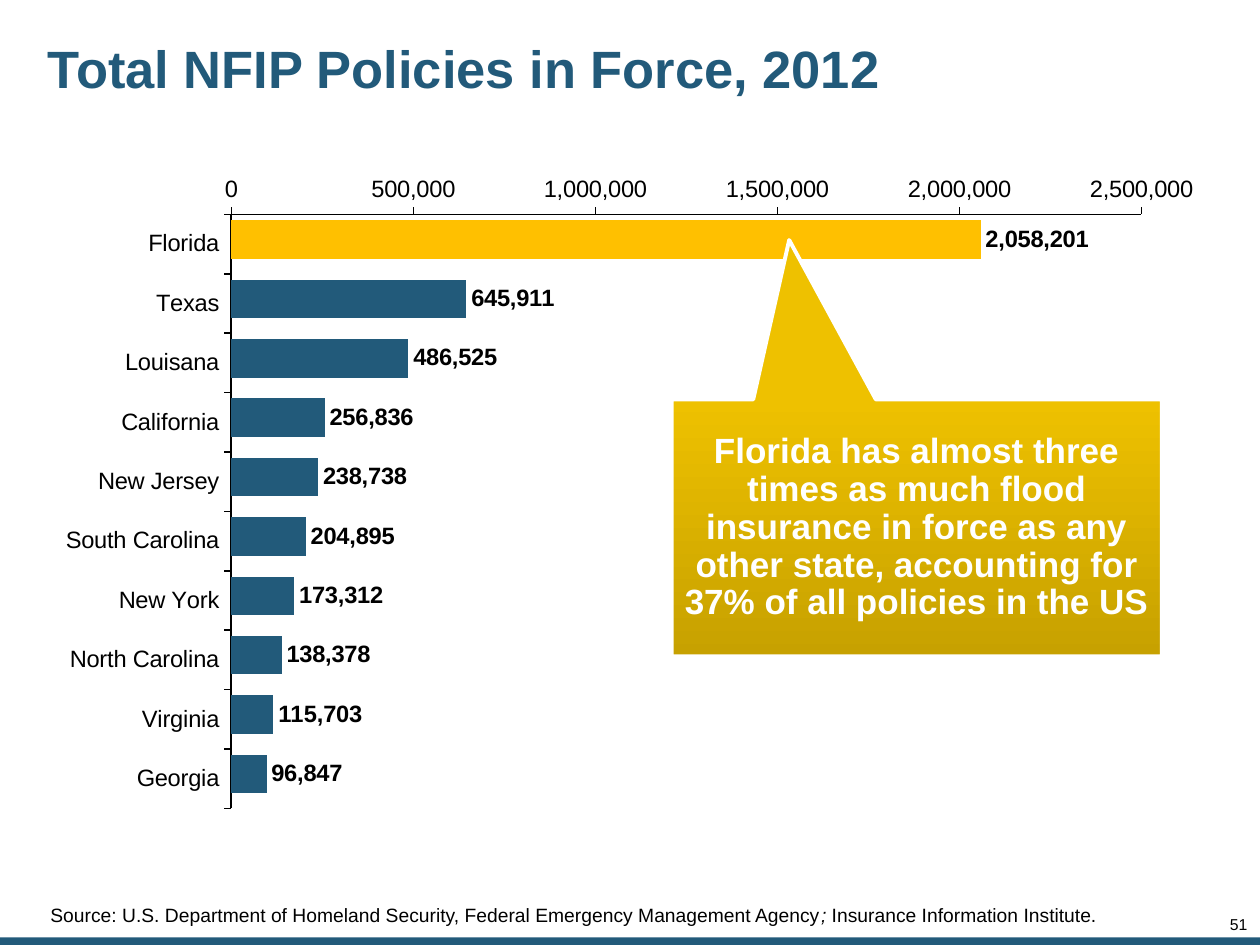
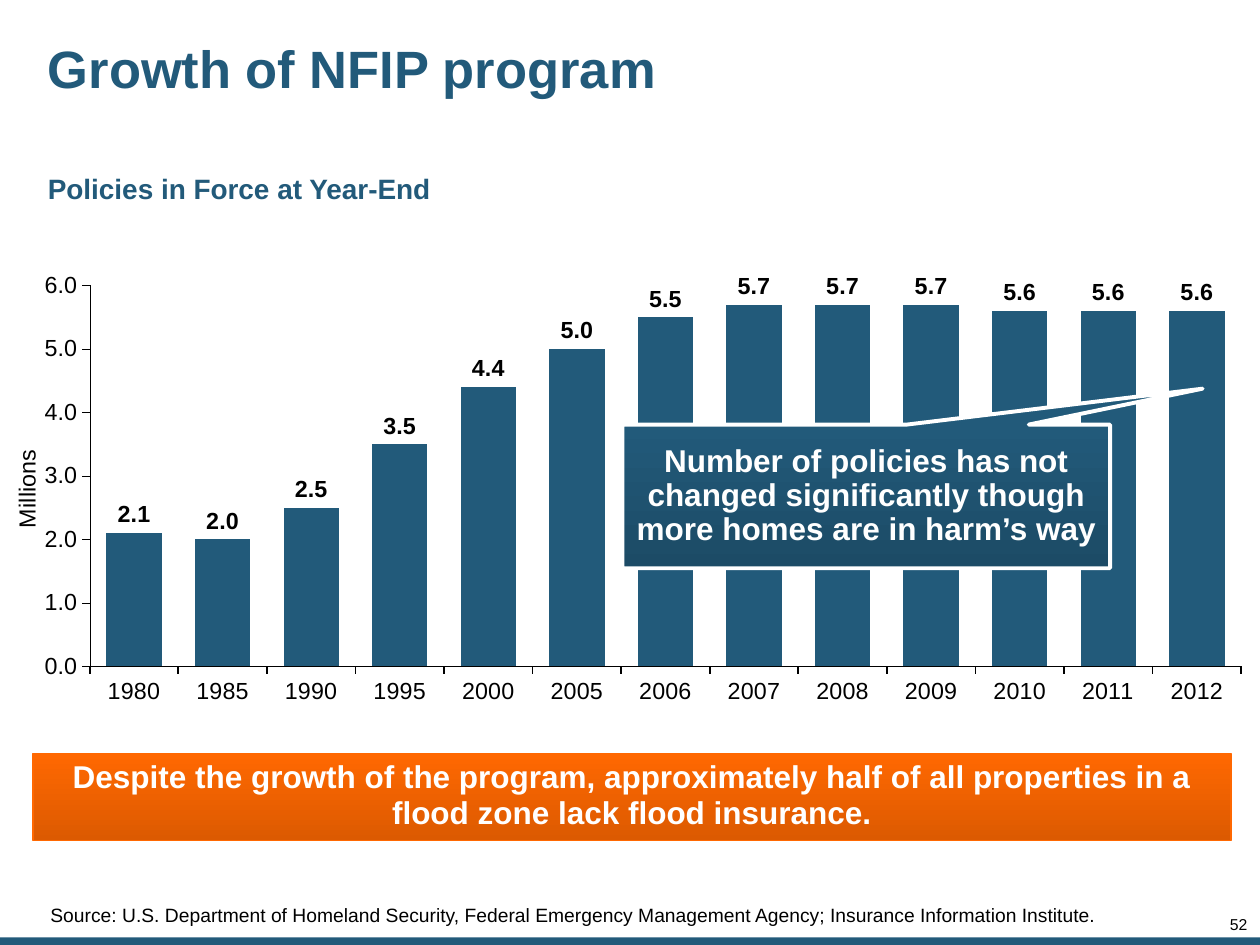
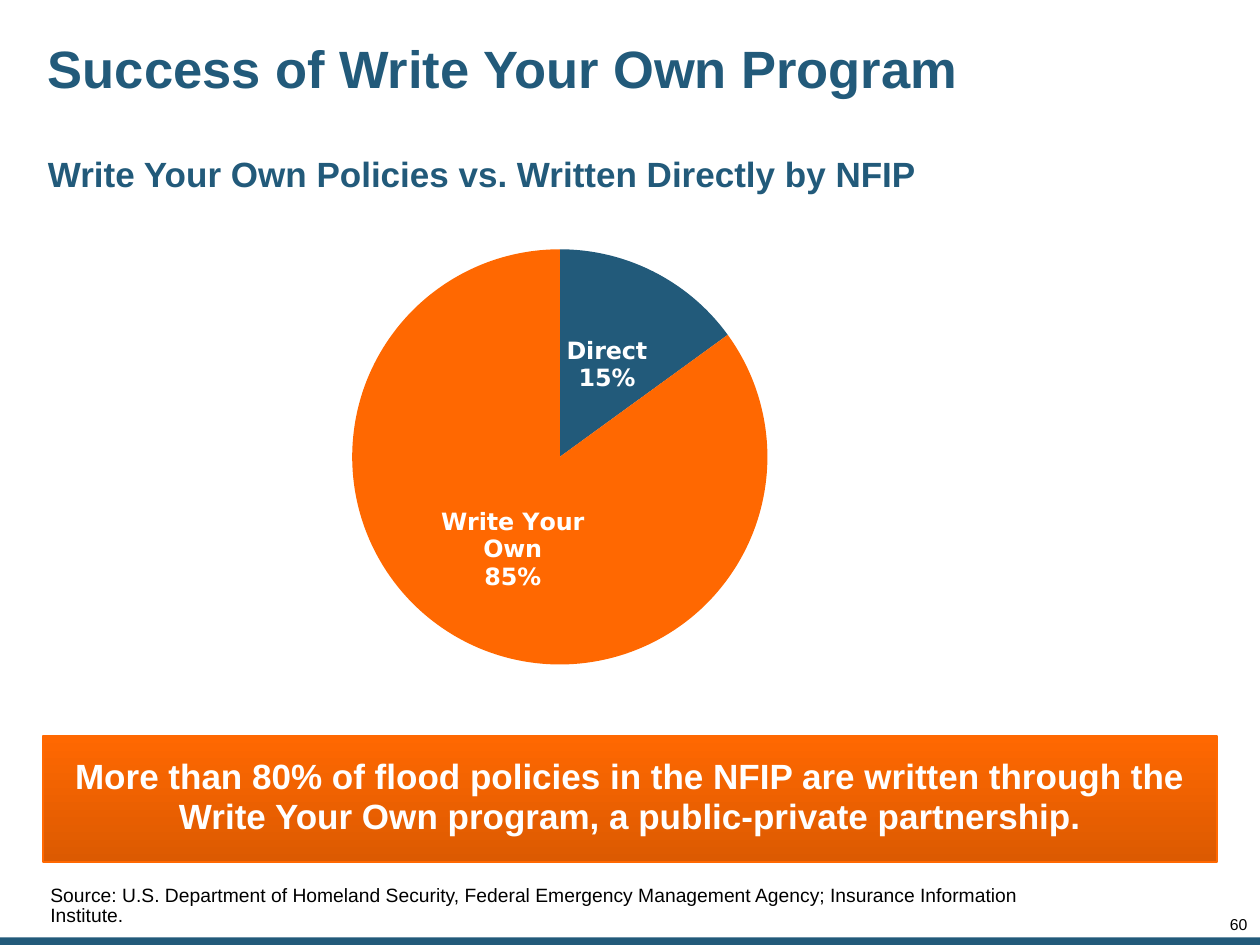
from dataclasses import dataclass

from lxml import etree
from pptx import Presentation
from pptx import util as u
from pptx.chart.data import CategoryChartData
from pptx.dml.color import RGBColor
from pptx.enum import chart as charts, shapes, text
from pptx.oxml.ns import qn

Inches, Pt = u.Inches, u.Pt
ALIGN, ANCHOR = text.PP_ALIGN, text.MSO_ANCHOR


@dataclass(frozen=True)
class Theme:
    font: str = "Arial"
    pie_font: str = "DejaVu Sans"
    ink: str = "000000"
    white: str = "FFFFFF"
    blue: str = "225A7A"
    deep_blue: str = "1C4B66"
    orange: str = "FF6801"
    deep_orange: str = "DC5A01"
    gold: str = "EEC100"
    deep_gold: str = "C7A100"
    highlight: str = "FFC000"
    title: float = 30
    large: float = 20
    medium: float = 18
    small: float = 16
    source: float = 11
    number: float = 9
    bar_label: float = 13.8
    column_label: float = 13.3
    pie_label: float = 13.6


THEME = Theme()
AGENCY = "Source: U.S. Department of Homeland Security, Federal Emergency Management Agency"
INSTITUTE = "Insurance Information Institute."


def color(code):
    return RGBColor.from_string(code)


def place(at):
    return [Inches(length) for length in at]


def set_font(font, size, code, bold=False, name=THEME.font):
    font.name, font.size, font.bold = name, Pt(size), bold
    font.color.rgb = color(code)


def write(box, spans, size, code=THEME.ink, bold=False, align=ALIGN.LEFT,
          anchor=ANCHOR.TOP, insets=(0, 0, 0, 0), spacing=0.9):
    frame = box.text_frame
    frame.word_wrap = True
    frame.auto_size = text.MSO_AUTO_SIZE.NONE
    frame.vertical_anchor = anchor
    frame.margin_left, frame.margin_top, frame.margin_right, frame.margin_bottom = place(insets)
    para = frame.paragraphs[0]
    para.alignment, para.line_spacing = align, spacing
    para.space_before = Pt(0)
    for words, italic in spans if isinstance(spans, list) else [(spans, False)]:
        span = para.add_run()
        span.text = words
        set_font(span.font, size, code, bold)
        span.font.italic = italic


class SlideBuilder:
    def __init__(self, theme):
        self.theme = theme
        self.deck = Presentation()
        self.deck.slide_width, self.deck.slide_height = Inches(10), Inches(7.5)
        self.page = None

    def start(self, title, number):
        self.page = self.deck.slides.add_slide(self.deck.slide_layouts[5])
        heading = self.page.shapes.title
        heading.left, heading.top, heading.width, heading.height = place((0.33, 0.1, 8.09, 0.94))
        write(heading, title, self.theme.title, self.theme.blue, bold=True,
              anchor=ANCHOR.MIDDLE, insets=(0.05,) * 4)
        band = self.shape(shapes.MSO_SHAPE.RECTANGLE, (0, 7.44, 10, 0.06))
        band.fill.solid()
        band.fill.fore_color.rgb = color(self.theme.blue)
        band.line.fill.background()
        self.label(str(number), (9.41, 7.28, 0.49, 0.13), size=self.theme.number,
                   align=ALIGN.RIGHT, spacing=0.85)

    def shape(self, kind, at):
        box = self.page.shapes.add_shape(kind, *place(at))
        box.shadow.inherit = False
        return box

    def label(self, words, at, **style):
        write(self.page.shapes.add_textbox(*place(at)), words, **style)

    def subtitle(self, words, at, size):
        self.label(words, at, size=size, code=self.theme.blue, bold=True)

    def source(self, words, width):
        self.label(words, (0, 6.99, width, 0.51), size=self.theme.source,
                   anchor=ANCHOR.BOTTOM, insets=(0.4, 0, 0, 0.15), spacing=0.85)

    def panel(self, kind, at, words, size, shades, outline, weight, **style):
        box = self.shape(kind, at)
        box.fill.gradient()
        box.fill.gradient_angle = 270
        for stop, shade in zip(box.fill.gradient_stops, shades):
            stop.color.rgb = color(shade)
        box.line.color.rgb = color(outline)
        box.line.width = Pt(weight)
        write(box, words, size, self.theme.white, bold=True, align=ALIGN.CENTER,
              anchor=ANCHOR.MIDDLE, **style)
        return box

    def banner(self, words, at, size):
        self.panel(shapes.MSO_SHAPE.RECTANGLE, at, words, size,
                   (self.theme.orange, self.theme.deep_orange), self.theme.orange, 1,
                   insets=(0.1, 0.05, 0.1, 0.07), spacing=0.95)

    def callout(self, words, at, size, shades, pointer):
        box = self.panel(shapes.MSO_SHAPE.RECTANGULAR_CALLOUT, at, words, size, shades,
                         self.theme.white, 2.25, insets=(0.1,) * 4)
        box.adjustments[0], box.adjustments[1] = pointer

    def chart(self, kind, at, layout, categories, series, size, number_format,
              label_color, font, position):
        data = CategoryChartData(number_format=number_format)
        data.categories = categories
        for index, values in enumerate(series, 1):
            data.add_series(f"Series {index}", values)
        chart = self.page.shapes.add_chart(kind, *place(at), data).chart
        chart.has_legend = chart.has_title = False
        set_font(chart.font, size, self.theme.ink, name=font)
        self.fix_plot_area(chart, layout)
        plot = chart.plots[0]
        plot.vary_by_categories = False
        labels = plot.series[0].data_labels
        labels.show_value = True
        labels.number_format, labels.number_format_is_linked = number_format, False
        labels.position = position
        set_font(labels.font, size, label_color, bold=True, name=font)
        return chart

    def fix_plot_area(self, chart, layout):
        area = chart.element.find(".//" + qn("c:plotArea"))
        for old in area.findall(qn("c:layout")):
            area.remove(old)
        frame = etree.Element(qn("c:layout"))
        manual = etree.SubElement(frame, qn("c:manualLayout"))
        settings = [("layoutTarget", "inner"), ("xMode", "edge"), ("yMode", "edge"),
                    *zip("xywh", layout)]
        for tag, value in settings:
            etree.SubElement(manual, qn("c:" + tag)).set("val", str(value))
        area.insert(0, frame)

    def bars(self, kind, at, layout, categories, series, size, number_format,
             gap, overlap, maximum, step):
        chart = self.chart(kind, at, layout, categories, series, size, number_format,
                           self.theme.ink, self.theme.font,
                           charts.XL_LABEL_POSITION.OUTSIDE_END)
        plot = chart.plots[0]
        plot.gap_width, plot.overlap = gap, overlap
        for axis, weight in ((chart.category_axis, 1), (chart.value_axis, 0.25)):
            axis.has_major_gridlines = False
            axis.major_tick_mark = charts.XL_TICK_MARK.OUTSIDE
            axis.minor_tick_mark = charts.XL_TICK_MARK.NONE
            axis.format.line.color.rgb = color(self.theme.ink)
            axis.format.line.width = Pt(weight)
            set_font(axis.tick_labels.font, size, self.theme.ink)
        values = chart.value_axis
        values.minimum_scale, values.maximum_scale, values.major_unit = 0, maximum, step
        values.tick_labels.number_format = number_format
        values.tick_labels.number_format_is_linked = False
        self.paint(plot.series[0].format.fill, self.theme.blue)
        return chart

    def paint(self, fill, code):
        fill.solid()
        fill.fore_color.rgb = color(code)

    def pie(self, at, layout, categories, values, colors):
        chart = self.chart(charts.XL_CHART_TYPE.PIE, at, layout, categories, [values],
                           self.theme.pie_label, "0%", self.theme.white,
                           self.theme.pie_font, charts.XL_LABEL_POSITION.CENTER)
        series = chart.plots[0].series[0]
        series.data_labels.show_category_name = True
        separator = etree.Element(qn("c:separator"))
        separator.text = "\n"
        chart.element.find(".//" + qn("c:ser")).find(
            ".//" + qn("c:showBubbleSize")).addnext(separator)
        for index, code in enumerate(colors):
            self.paint(series.points[index].format.fill, code)


def policies_by_state(builder):
    theme = builder.theme
    builder.start("Total NFIP Policies in Force, 2012", 51)
    builder.source([(AGENCY, False), ("; ", True), (INSTITUTE, False)], 8.8)
    states = {"Florida": 2058201, "Texas": 645911, "Louisana": 486525,
              "California": 256836, "New Jersey": 238738, "South Carolina": 204895,
              "New York": 173312, "North Carolina": 138378, "Virginia": 115703,
              "Georgia": 96847}
    chart = builder.bars(charts.XL_CHART_TYPE.BAR_CLUSTERED, (0.35, 1.4, 9.13, 5.48),
                         (0.166, 0.038, 0.807, 0.876), list(states),
                         [list(states.values()), [None] * len(states)],
                         theme.bar_label, "#,##0", gap=30, overlap=76,
                         maximum=2500000, step=500000)
    chart.category_axis.reverse_order = True
    chart.category_axis.crosses = charts.XL_AXIS_CROSSES.MAXIMUM
    builder.paint(chart.plots[0].series[0].points[0].format.fill, theme.highlight)
    builder.callout("Florida has almost three times as much flood insurance in force as any "
                    "other state, accounting for 37% of all policies in the US",
                    (5.33, 3.17, 3.89, 2.04), theme.large, (theme.gold, theme.deep_gold),
                    (-0.26, -1.12))


def program_growth(builder):
    theme = builder.theme
    builder.start("Growth of NFIP program", 52)
    builder.source(f"{AGENCY}; {INSTITUTE}", 9.44)
    builder.subtitle("Policies in Force at Year-End", (0.38, 1.39, 8.99, 0.24), theme.small)
    builder.banner("Despite the growth of the program, approximately half of all properties "
                   "in a flood zone lack flood insurance.", (0.26, 5.98, 9.51, 0.69),
                   theme.medium)
    years = [*range(1980, 2005, 5), *range(2005, 2013)]
    millions = [2.1, 2.0, 2.5, 3.5, 4.4, 5.0, 5.5, 5.7, 5.7, 5.7, 5.6, 5.6, 5.6]
    chart = builder.bars(charts.XL_CHART_TYPE.COLUMN_CLUSTERED, (0.06, 2.03, 9.89, 4.01),
                         (0.066, 0.059, 0.924, 0.754), [str(year) for year in years],
                         [millions], theme.column_label, "#,##0.0", gap=60, overlap=0,
                         maximum=6, step=1)
    caption = chart.value_axis.axis_title.text_frame
    caption.text = "Millions"
    set_font(caption.paragraphs[0].runs[0].font, theme.column_label, theme.ink)
    builder.callout("Number of policies has not changed significantly though more homes are "
                    "in harm’s way", (4.94, 3.37, 3.87, 1.14), theme.medium,
                    (theme.blue, theme.deep_blue), (0.69, -0.75))


def write_your_own(builder):
    theme = builder.theme
    builder.start("Success of Write Your Own Program", 60)
    builder.subtitle("Write Your Own Policies vs. Written Directly by NFIP",
                     (0.38, 1.25, 9.33, 0.3), theme.large)
    builder.source(f"{AGENCY}; {INSTITUTE}", 8.28)
    builder.banner("More than 80% of flood policies in the NFIP are written through the "
                   "Write Your Own program, a public-private partnership.",
                   (0.34, 5.84, 9.32, 1), theme.large)
    builder.pie((2.49, 1.65, 3.91, 3.95), (0.078, 0.003, 0.843, 0.995),
                ["Direct", "Write Your Own"], [0.15, 0.85], [theme.blue, theme.orange])


def main():
    builder = SlideBuilder(THEME)
    for build in (policies_by_state, program_growth, write_your_own):
        build(builder)
    builder.deck.save("out.pptx")


if __name__ == "__main__":
    main()
